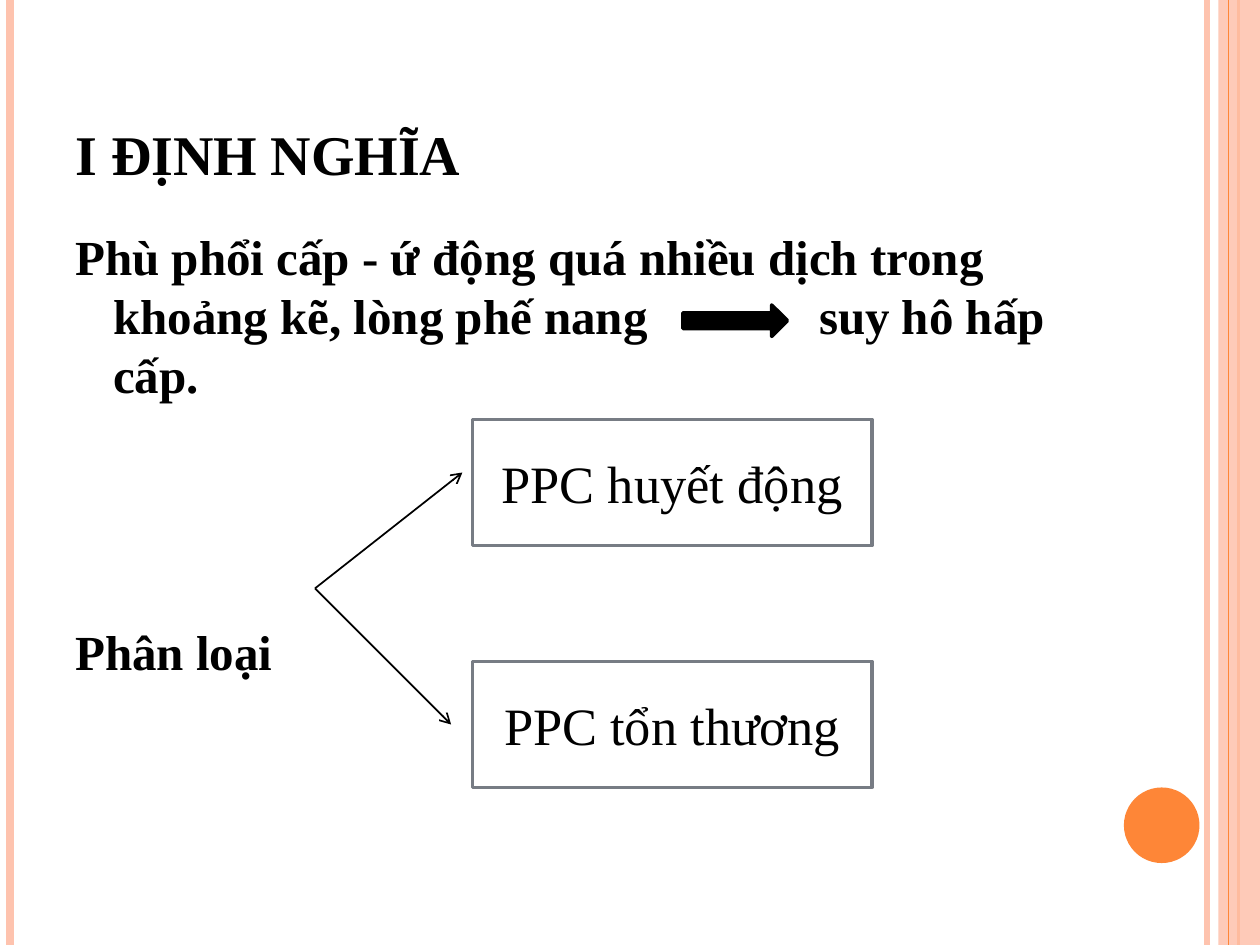
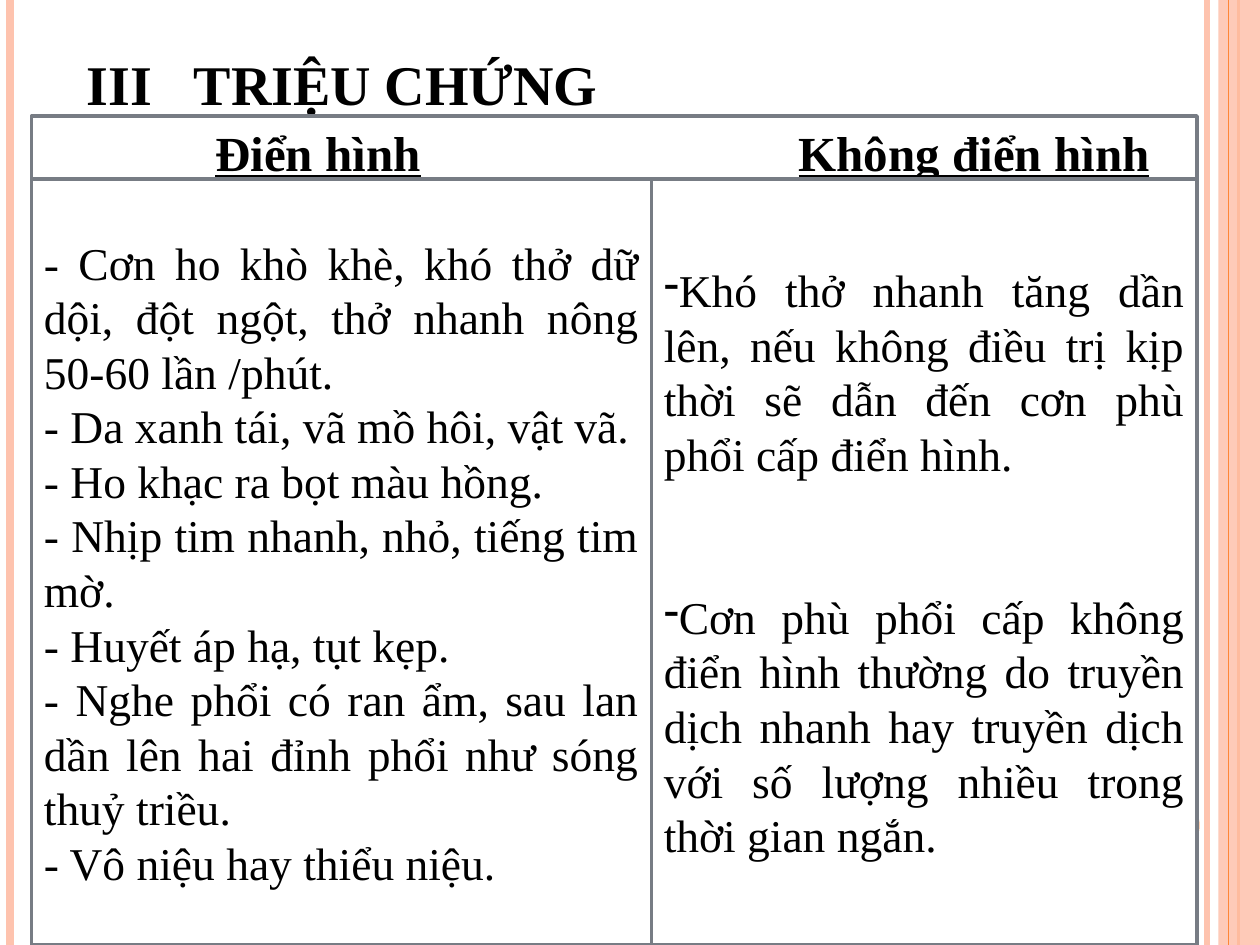
from lxml.etree import SubElement
from pptx import Presentation
from pptx.dml.color import RGBColor
from pptx.enum.shapes import MSO_CONNECTOR, MSO_SHAPE
from pptx.enum.text import MSO_ANCHOR, PP_ALIGN
from pptx.oxml.ns import qn
from pptx.util import Inches, Pt

# Content: a run is (text, style); "gap" is the extra width of a space in points
DEFINITION_TITLE = [("i định nghĩa", {})]
DEFINITION = [
    ("Phù phổi cấp - ứ động quá nhiều dịch trong khoảng kẽ, lòng phế nang", {}),
    (" ", {"gap": 91}),
    ("suy hô hấp cấp.", {}),
]
CLASSIFICATION = [("Phân loại", {})]
# Each type: name, top of its box, tip of the arrow that leads to it
EDEMA_TYPES = [
    ("PPC huyết động", 3.33, (3.67, 3.75)),
    ("PPC tổn thương", 5.25, (3.58, 5.75)),
]
BRANCH_POINT = (2.5, 4.67)

SYMPTOMS_TITLE = [("iii", {}), (" ", {"gap": 8}), ("triệu chứng", {})]
# Column heading and its distance from the left text edge
HEADINGS = [("Điển hình", 1.36), ("Không điển hình", 5.99)]
TYPICAL = [
    "- Cơn ho khò khè, khó thở dữ dội, đột ngột, thở nhanh nông 50-60 lần /phút.",
    "- Da xanh tái, vã mồ hôi, vật vã.",
    "- Ho khạc ra bọt màu hồng.",
    "- Nhịp tim nhanh, nhỏ, tiếng tim mờ.",
    "- Huyết áp hạ, tụt kẹp.",
    "- Nghe phổi có ran ẩm, sau lan dần lên hai đỉnh phổi như sóng thuỷ triều.",
    "- Vô niệu hay thiểu niệu.",
]
ATYPICAL = [
    "Khó thở nhanh tăng dần lên, nếu không điều trị kịp thời sẽ dẫn đến cơn phù "
    "phổi cấp điển hình.",
    "Cơn phù phổi cấp không điển hình thường do truyền dịch nhanh hay truyền dịch "
    "với số lượng nhiều trong thời gian ngắn.",
]

# Shared look
COLORS = {"text": "000000", "paper": "FFFFFF", "border": "777C84",
          "peach": "FEC3AE", "orange": "FE8637"}
FONT = "Times New Roman"
WIDTH, HEIGHT = 10, 7.5
# Vertical rules: x, colour, width; the band lies above the first three
RULES_BELOW_BAND = [(9.58, "peach", 3), (0.08, "peach", 4.5), (9.83, "orange", 1.5)]
RULE_ON_BAND = (9.75, "orange", 0.75)


def color(name):
    return RGBColor.from_string(COLORS[name])


def add_line(slide, start, end, line_color, width, arrow=False):
    points = [Inches(value) for value in (*start, *end)]
    connector = slide.shapes.add_connector(MSO_CONNECTOR.STRAIGHT, *points)
    connector.line.color.rgb = color(line_color)
    connector.line.width = Pt(width)
    if arrow:
        SubElement(connector.line._get_or_add_ln(), qn("a:tailEnd"), type="arrow")
    SubElement(connector._element.spPr, qn("a:effectLst"))


def add_shape(slide, kind, box, fill, border=None):
    shape = slide.shapes.add_shape(kind, *[Inches(value) for value in box])
    shape.shadow.inherit = False
    shape.fill.solid()
    shape.fill.fore_color.rgb = color(fill)
    if border:
        shape.line.color.rgb = color(border)
        shape.line.width = Pt(2)
    else:
        shape.line.fill.background()
    return shape


def add_box(slide, box):
    return add_shape(slide, MSO_SHAPE.RECTANGLE, box, "paper", "border")


def add_text_box(slide, box):
    return slide.shapes.add_textbox(*[Inches(value) for value in box])


def write(shape, paragraphs, size, align=PP_ALIGN.LEFT, anchor=MSO_ANCHOR.TOP,
          bold=False, small_caps=False, before=0):
    """Fill a shape with paragraphs, each a list of runs, and return them."""
    frame = shape.text_frame
    frame.word_wrap = True
    frame.vertical_anchor = anchor
    for index, runs in enumerate(paragraphs):
        paragraph = frame.add_paragraph() if index else frame.paragraphs[0]
        paragraph.alignment = align
        paragraph.space_before = Pt(before)
        for text, style in runs:
            run = paragraph.add_run()
            run.text = text
            run.font.name = FONT
            run.font.size = Pt(size)
            run.font.bold = bold
            run.font.color.rgb = color("text")
            if style.get("underline"):
                run.font.underline = True
            properties = run._r.get_or_add_rPr()
            if small_caps:
                properties.set("cap", "small")
            if "gap" in style:
                properties.set("spc", str(style["gap"] * 100))
    return frame.paragraphs


def add_slide(presentation, title, title_box):
    """Start a slide with the side rules, the band, the disc and a title."""
    slide = presentation.slides.add_slide(presentation.slide_layouts[6])
    for x, name, width in RULES_BELOW_BAND:
        add_line(slide, (x, 0), (x, HEIGHT), name, width)
    band = add_shape(slide, MSO_SHAPE.RECTANGLE, (9.67, 0, 0.33, HEIGHT), "peach")
    band_color = band._element.spPr.find(qn("a:solidFill"))[0]
    SubElement(band_color, qn("a:alpha"), val="87000")
    x, name, width = RULE_ON_BAND
    add_line(slide, (x, 0), (x, HEIGHT), name, width)
    add_shape(slide, MSO_SHAPE.OVAL, (8.92, 6.25, 0.6, 0.6), "orange")
    write(add_text_box(slide, title_box), [title], 40,
          anchor=MSO_ANCHOR.BOTTOM, bold=True, small_caps=True)
    return slide


def build_definition(presentation):
    slide = add_slide(presentation, DEFINITION_TITLE, (0.5, 0.3, 8.17, 1.25))
    body = add_text_box(slide, (0.5, 1.75, 8.17, 5.33))
    paragraphs = write(body, [DEFINITION, CLASSIFICATION], 28, bold=True, before=6)
    for paragraph in paragraphs:
        properties = paragraph._p.get_or_add_pPr()
        properties.set("marL", str(Inches(0.3)))
        properties.set("indent", str(Inches(-0.3)))
    paragraphs[1].space_before = Pt(125)

    # Consequence arrow, then the two branches
    add_shape(slide, MSO_SHAPE.RIGHT_ARROW, (5.42, 2.42, 0.83, 0.25), "text", "text")
    for name, top, tip in EDEMA_TYPES:
        add_line(slide, BRANCH_POINT, tip, "text", 1, arrow=True)
        write(add_box(slide, (3.75, top, 3.17, 1)), [[(name, {})]], 30,
              PP_ALIGN.CENTER, MSO_ANCHOR.MIDDLE)


def build_symptoms(presentation):
    slide = add_slide(presentation, SYMPTOMS_TITLE, (0.59, 0.13, 8.17, 0.87))

    # Heading row, placed by tab stops
    heading_runs = []
    for name, _ in HEADINGS:
        heading_runs += [("\t", {}), (name, {"underline": True})]
    heading_box = add_box(slide, (0.25, 0.92, 9.25, 6.58))
    heading = write(heading_box, [heading_runs], 28, bold=True, before=6)[0]
    tabs = SubElement(heading._p.get_or_add_pPr(), qn("a:tabLst"))
    for _, position in HEADINGS:
        SubElement(tabs, qn("a:tab"), pos=str(Inches(position)), algn="l")

    # Two columns side by side
    left = 0.25
    columns = []
    for width, lines in ((4.92, TYPICAL), (4.33, ATYPICAL)):
        column = add_box(slide, (left, 1.42, width, 6.08))
        columns.append(write(column, [[(line, {})] for line in lines], 26,
                             PP_ALIGN.JUSTIFY, MSO_ANCHOR.MIDDLE))
        left += width
    atypical = columns[1]
    atypical[1].space_before = Pt(62)
    for paragraph in atypical:
        SubElement(paragraph._p.get_or_add_pPr(), qn("a:buChar"), char="-")


def main():
    presentation = Presentation()
    presentation.slide_width = Inches(WIDTH)
    presentation.slide_height = Inches(HEIGHT)
    build_definition(presentation)
    build_symptoms(presentation)
    presentation.save("out.pptx")


if __name__ == "__main__":
    main()
